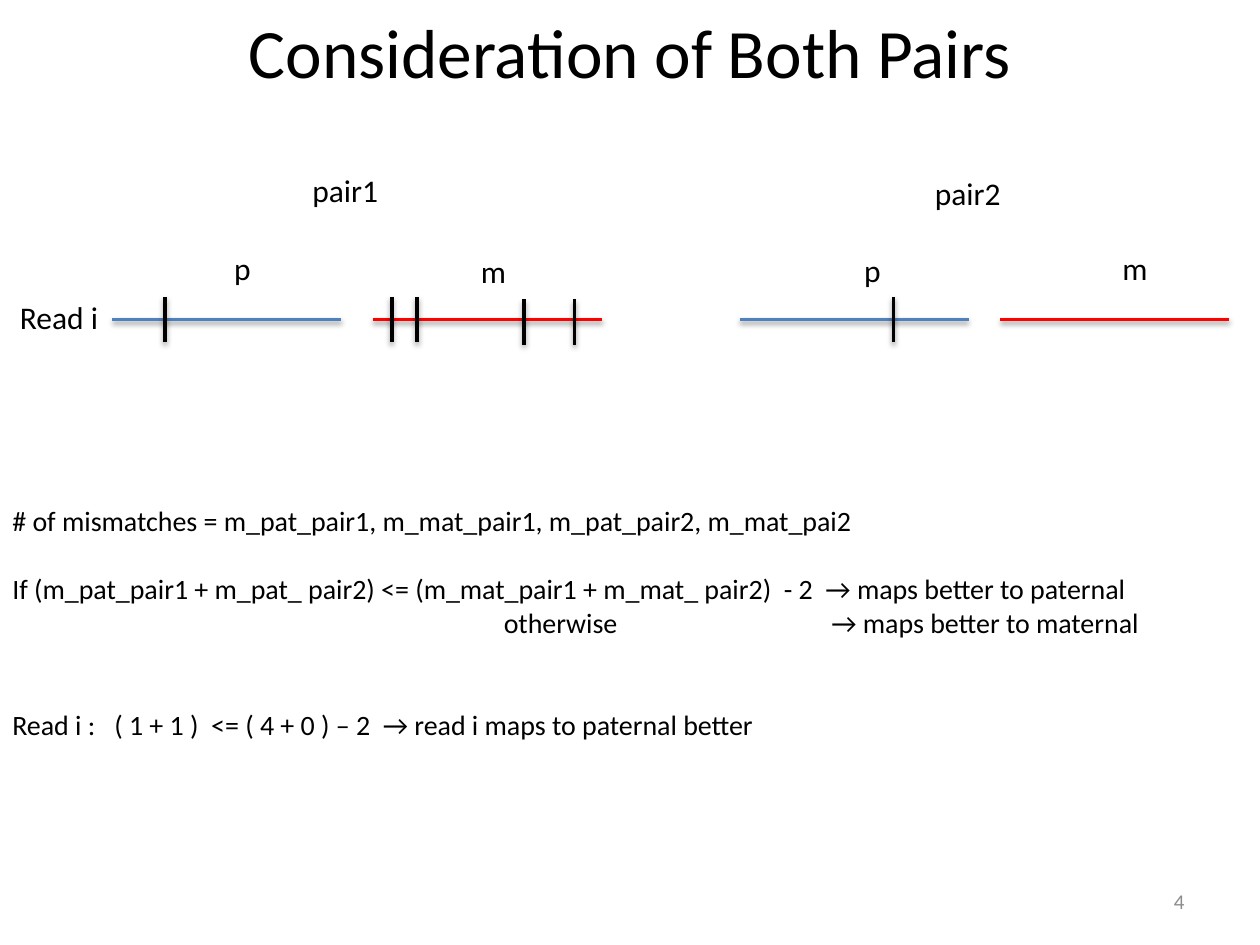
import pptx
import pptx.util
import pptx.dml.color
import pptx.enum.shapes
import pptx.enum.text
import pptx.oxml
import pptx.oxml.ns
from dataclasses import dataclass

Pt = pptx.util.Pt
Align = pptx.enum.text.PP_ALIGN
Anchor = pptx.enum.text.MSO_ANCHOR
Fit = pptx.enum.text.MSO_AUTO_SIZE


@dataclass(frozen=True)
class Theme:
    """Colours, font and sizes of the slide."""
    font: str = "Calibri"
    ink: str = "000000"
    blue: str = "4F81BD"
    red: str = "FF0000"
    grey: str = "8C8C8C"
    title: float = 39.6
    label: float = 18
    body: float = 16
    foot: float = 12
    line: float = 2


theme = Theme()

SHADE = (
    '<a:effectLst %s><a:outerShdw blurRad="%d" dist="%d" dir="5400000" rotWithShape="0">'
    '<a:srgbClr val="%s"><a:alpha val="38000"/></a:srgbClr></a:outerShdw></a:effectLst>'
    % (pptx.oxml.ns.nsdecls("a"), Pt(3.1), Pt(1.6), theme.ink)
)


def color(code):
    """Turn a hex code into a colour."""
    return pptx.dml.color.RGBColor.from_string(code)


def write(para, text, size, ink=theme.ink):
    """Add one styled run to a paragraph."""
    run = para.add_run()
    run.text = text
    run.font.name = theme.font
    run.font.size = Pt(size)
    run.font.color.rgb = color(ink)


def frame(slide, box, wrap=True, fit=Fit.SHAPE_TO_FIT_TEXT):
    """Add a text box and return its text frame."""
    text = slide.shapes.add_textbox(*map(Pt, box)).text_frame
    text.word_wrap = wrap
    text.auto_size = fit
    return text


def label(slide, x, y, wide, text):
    """Place a one-line label."""
    area = frame(slide, (x, y, wide, 29), wrap=False)
    write(area.paragraphs[0], text, theme.label)


def stroke(slide, x1, y1, x2, y2, ink):
    """Draw a straight line with a soft shadow."""
    kind = pptx.enum.shapes.MSO_CONNECTOR.STRAIGHT
    line = slide.shapes.add_connector(kind, *map(Pt, (x1, y1, x2, y2)))
    line.line.color.rgb = color(ink)
    line.line.width = Pt(theme.line)
    line._element.spPr.append(pptx.oxml.parse_xml(SHADE))


def strand(slide, box, ink, name, place, ticks):
    """Draw one strand with its label and mismatch ticks."""
    x, y, wide, high = box
    mid = y + high / 2
    stroke(slide, x, mid, x + wide, mid, ink)
    dx, dy, size = place
    label(slide, x + dx, y + dy, size, name)
    for at, drop in ticks:
        stroke(slide, x + at, y + drop, x + at, y + high + drop, theme.ink)


def pair(slide, box, name, place, parts):
    """Draw a read pair: its name, then both strands."""
    x, y, wide, high = box
    gap = 18.2
    size = (wide - gap) / 2
    label(slide, x + place[0], y + place[1], 52.6, name)
    for num, part in enumerate(parts):
        left = x + num * (size + gap)
        strand(slide, (left, y + high - 26, size, 26), *part)


def heading(slide, box, text):
    """Place and format the title."""
    title = slide.shapes.title
    title.left, title.top, title.width, title.height = map(Pt, box)
    area = title.text_frame
    area.vertical_anchor = Anchor.MIDDLE
    para = area.paragraphs[0]
    para.alignment = Align.CENTER
    write(para, text, theme.title)


def rules(slide, box, lines, stops):
    """Write the mapping rules with gaps and tab stops."""
    area = frame(slide, box)
    for num, (text, gap) in enumerate(lines):
        para = area.paragraphs[0] if num == 0 else area.add_paragraph()
        if gap:
            para.space_before = Pt(gap)
        if "\t" in text:
            tabs = "".join('<a:tab pos="%d" algn="l"/>' % Pt(stop) for stop in stops)
            para._p.get_or_add_pPr().append(pptx.oxml.parse_xml(
                "<a:tabLst %s>%s</a:tabLst>" % (pptx.oxml.ns.nsdecls("a"), tabs)))
        write(para, text, theme.body)


def footer(slide, box, text):
    """Write the page number."""
    area = frame(slide, box, fit=Fit.NONE)
    area.vertical_anchor = Anchor.MIDDLE
    para = area.paragraphs[0]
    para.alignment = Align.RIGHT
    write(para, text, theme.foot, theme.grey)


def main():
    """Build and save the slide."""
    deck = pptx.Presentation()
    deck.slide_width, deck.slide_height = Pt(720), Pt(540)
    slide = deck.slides.add_slide(deck.slide_layouts[5])
    heading(slide, (36, 0, 648, 58.5), "Consideration of Both Pairs")
    label(slide, 4.3, 166.5, 59.8, "Read i")
    pair(slide, (64.1, 94.3, 279.8, 101.4), "pair1", (107.3, 0), [
        (theme.blue, "p", (62.6, -30.7, 23.8), [(30.2, 0)]),
        (theme.red, "m", (54.7, -29.3, 28.8),
         [(10.8, 0), (25.2, 0), (86.4, 1.4), (115.2, 1.4)]),
    ])
    pair(slide, (422.7, 94.3, 279.8, 101.4), "pair2", (104.4, 1.4), [
        (theme.blue, "p", (64, -30, 23.8), [(87.8, 0)]),
        (theme.red, "m", (62.6, -30.7, 28.8), []),
    ])
    rules(slide, (0, 284.4, 702.7, 143.3), [
        ("# of mismatches = m_pat_pair1, m_mat_pair1, m_pat_pair2, m_mat_pai2", 0),
        ("If (m_pat_pair1 + m_pat_ pair2) <= (m_mat_pair1 + m_mat_ pair2)  - 2  "
         "→ maps better to paternal", 19.5),
        ("\totherwise\t→ maps better to maternal", 0),
        ("Read i :   ( 1 + 1 )  <= ( 4 + 0 ) – 2  → read i maps to paternal better", 39),
    ], (280.8, 468))
    footer(slide, (516, 500.5, 168, 28.8), "4")
    deck.save("out.pptx")


if __name__ == "__main__":
    main()
